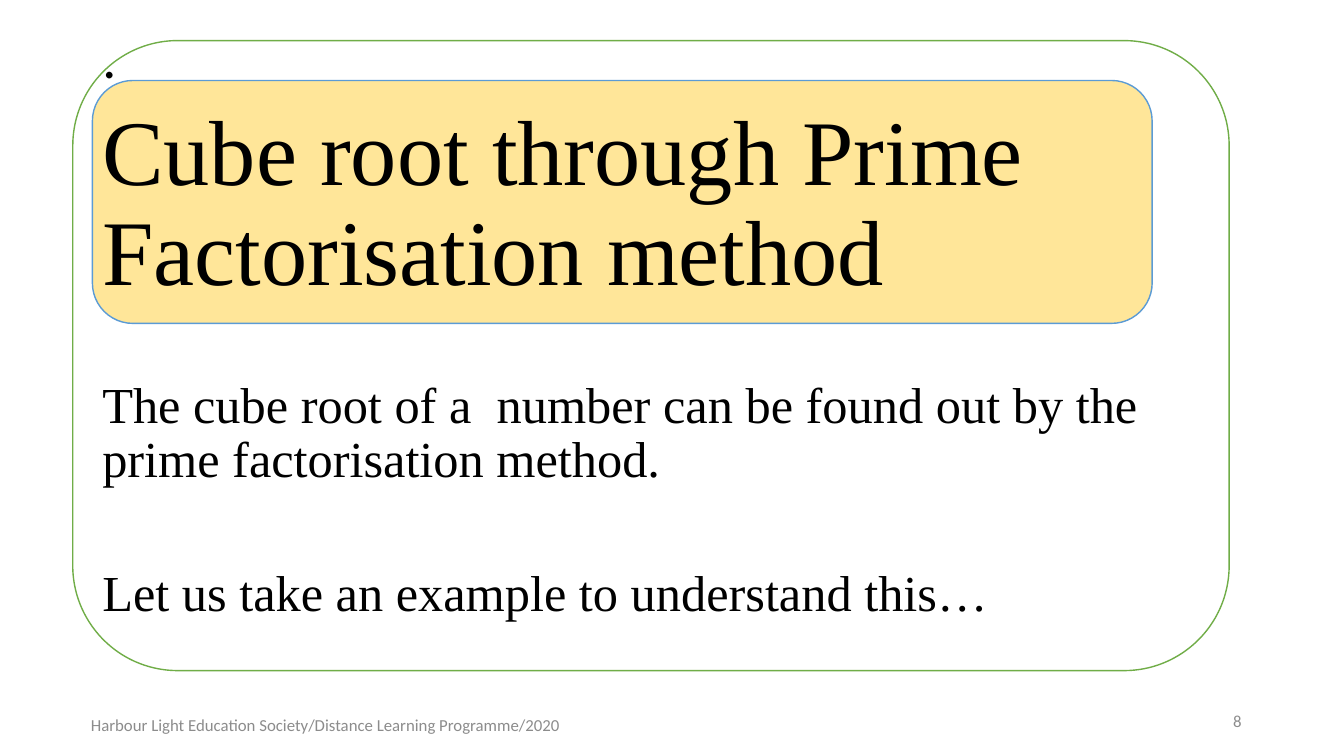
"""Build the slide introducing cube roots by prime factorisation."""
from pptx import Presentation
from pptx.dml.color import RGBColor
from pptx.enum.shapes import MSO_SHAPE
from pptx.enum.text import MSO_ANCHOR, PP_ALIGN
from pptx.util import Pt

ROUNDED = MSO_SHAPE.ROUNDED_RECTANGLE
TOP, MIDDLE = MSO_ANCHOR.TOP, MSO_ANCHOR.MIDDLE
LEFT, CENTER, RIGHT = PP_ALIGN.LEFT, PP_ALIGN.CENTER, PP_ALIGN.RIGHT
COLORS = {"white": "FFFFFF", "cream": "FFE699", "green": "70AD47",
          "blue": "5B9BD5", "black": "000000", "gray": "8C8C8C"}
SERIF, SANS = "Times New Roman", "Calibri"


def rgb(name):
    return RGBColor.from_string(COLORS[name])


def add_text(box, anchor, align, font, color, paragraphs, spacing=1.0):
    tf = s.shapes.add_textbox(*map(Pt, box)).text_frame
    tf.word_wrap = True
    tf.vertical_anchor = anchor
    for i, (text, size, before) in enumerate(paragraphs):
        p = tf.add_paragraph() if i else tf.paragraphs[0]
        p.text = text
        p.alignment = align
        p.line_spacing = spacing
        p.space_before = Pt(before)
        p.font.name = font
        p.font.size = Pt(size)
        p.font.color.rgb = rgb(color)


prs = Presentation()
prs.slide_width, prs.slide_height = Pt(960), Pt(540)
s = prs.slides.add_slide(prs.slide_layouts[6])

panels = [((52, 29, 826, 450), "white", "green"),
          ((66, 57.5, 757, 173.5), "cream", "blue")]
for box, fill, line in panels:
    sp = s.shapes.add_shape(ROUNDED, *map(Pt, box))
    sp.shadow.inherit = False
    sp.fill.solid()
    sp.fill.fore_color.rgb = rgb(fill)
    sp.line.color.rgb = rgb(line)
    sp.line.width = Pt(1)

lesson = [
    ("Cube root through Prime Factorisation method", 66, 10),
    ("The cube root of a  number can be found out by the prime factorisation method.", 36, 53),
    ("Let us take an example to understand this…", 36, 57),
]
add_text((66, 29, 828, 29), MIDDLE, LEFT, SANS, "black", [(".", 39.6, 0)], 0.9)
add_text((66, 72, 828, 415), TOP, LEFT, SERIF, "black", lesson, 0.9)
add_text((52, 503, 361, 29), MIDDLE, CENTER, SANS, "gray",
         [("Harbour Light Education Society/Distance Learning Programme/2020", 12, 0)])
add_text((678, 500.5, 216, 29), MIDDLE, RIGHT, SANS, "gray", [("8", 12, 0)])

prs.save("out.pptx")
